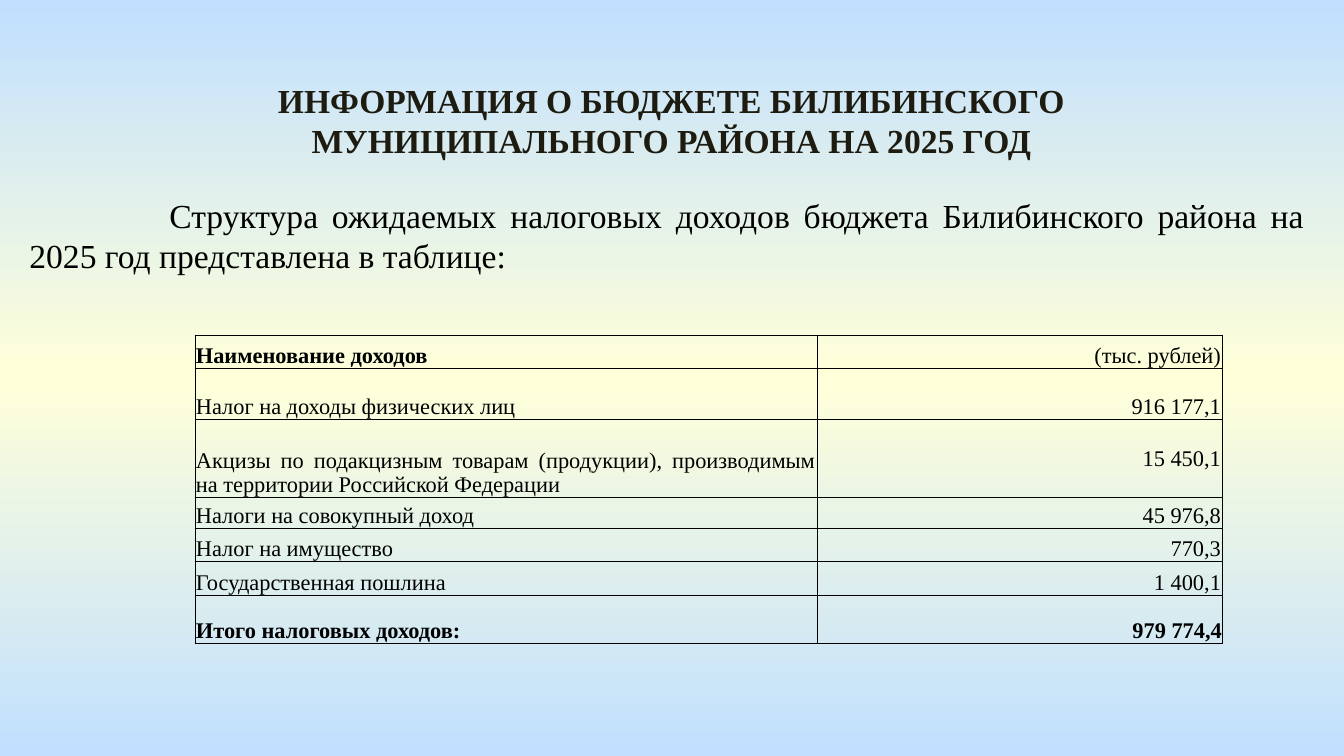
"""Build a slide on the expected tax revenues of the Bilibino district budget."""
import copy
import pptx
import pptx.dml.color
import pptx.enum.text
import pptx.oxml
import pptx.oxml.ns
import pptx.util

THEME = {
    "font": "Times New Roman",
    "title": "1E1C11", "text": "000000", "border": "000000",
    "sky": "C1E0FF", "cream": "FFFFD9",
    "heading_pt": 18, "table_pt": 12, "border_pt": 0.5,
}
PX = 914400 / 134.4
ALIGN = pptx.enum.text.PP_ALIGN
ANCHOR = pptx.enum.text.MSO_ANCHOR
qn = pptx.oxml.ns.qn


def px(*values):
    return [round(v * PX) for v in values]


def add_text(p, text, size, color, align, bold=False):
    p.alignment = align
    r = p.add_run()
    r.text = text
    r.font.name = THEME["font"]
    r.font.size = pptx.util.Pt(THEME[size])
    r.font.bold = bold
    r.font.color.rgb = pptx.dml.color.RGBColor.from_string(THEME[color])


prs = pptx.Presentation()
prs.slide_width, prs.slide_height = px(1344, 756)
s = prs.slides.add_slide(prs.slide_layouts[1])

fill = s.background.fill
fill.gradient()
fill.gradient_angle = 270
stops = next(s.element.iter(qn("a:gsLst")))
stops.insert(1, copy.deepcopy(stops[0]))
for stop, position, name in zip(fill.gradient_stops, (0, 0.5, 1), ("sky", "cream", "sky")):
    stop.position = position
    stop.color.rgb = pptx.dml.color.RGBColor.from_string(THEME[name])

title, intro = s.placeholders
for sp, box in ((title, (152, 73, 1039, 95)), (intro, (16, 188, 1302, 95))):
    sp.left, sp.top, sp.width, sp.height = px(*box)
    tf = sp.text_frame
    tf.word_wrap = True
    tf.auto_size = pptx.enum.text.MSO_AUTO_SIZE.NONE
    tf.vertical_anchor = ANCHOR.TOP
    tf.paragraphs[0].space_before = pptx.util.Pt(0)

add_text(title.text_frame.paragraphs[0],
         "ИНФОРМАЦИЯ О БЮДЖЕТЕ БИЛИБИНСКОГО МУНИЦИПАЛЬНОГО РАЙОНА НА 2025 ГОД",
         "heading_pt", "title", ALIGN.CENTER, True)

p = intro.text_frame.paragraphs[0]
pPr = p._p.get_or_add_pPr()
pPr.set("marL", "0")
pPr.set("indent", str(px(140)[0]))
pPr.append(pptx.oxml.parse_xml(f'<a:buNone {pptx.oxml.ns.nsdecls("a")}/>'))
add_text(p, "Структура ожидаемых налоговых доходов бюджета Билибинского района "
            "на 2025 год представлена в таблице:",
         "heading_pt", "text", ALIGN.JUSTIFY)

rows = [
    (33, "Наименование доходов", "(тыс. рублей)"),
    (52, "Налог на доходы физических лиц", "916 177,1"),
    (78, "Акцизы по подакцизным товарам (продукции), производимым "
         "на территории Российской Федерации", "15 450,1"),
    (31, "Налоги на совокупный доход", "45 976,8"),
    (33, "Налог на имущество", "770,3"),
    (34, "Государственная пошлина", "1 400,1"),
    (48, "Итого налоговых доходов:", "979 774,4"),
]
widths = (622, 405)
total_height = sum(row[0] for row in rows)
table = s.shapes.add_table(len(rows), len(widths),
                           *px(195, 335, sum(widths), total_height)).table
table.first_row = table.horz_banding = False
for column, width in zip(table.columns, px(*widths)):
    column.width = width

last = len(rows) - 1
for i, (height, *texts) in enumerate(rows):
    table.rows[i].height = px(height)[0]
    for j, text in enumerate(texts):
        cell = table.cell(i, j)
        cell.margin_left, cell.margin_right, cell.margin_top, cell.margin_bottom = px(1, 1, 1, 0)
        cell.vertical_anchor = ANCHOR.MIDDLE if (i, j) == (2, 1) else ANCHOR.BOTTOM
        if (i, j) == (last, 1):
            cell.margin_left = cell.margin_right = cell.margin_top = 0
        tcPr = cell._tc.get_or_add_tcPr()
        for side in ("lnL", "lnR", "lnT", "lnB"):
            tcPr.append(pptx.oxml.parse_xml(
                f'<a:{side} {pptx.oxml.ns.nsdecls("a")} w="{pptx.util.Pt(THEME["border_pt"])}">'
                f'<a:solidFill><a:srgbClr val="{THEME["border"]}"/></a:solidFill></a:{side}>'))
        cell.fill.background()
        add_text(cell.text_frame.paragraphs[0], text, "table_pt", "text",
                 ALIGN.RIGHT if j else ALIGN.JUSTIFY,
                 i == last or (i, j) == (0, 0))

prs.save("out.pptx")
